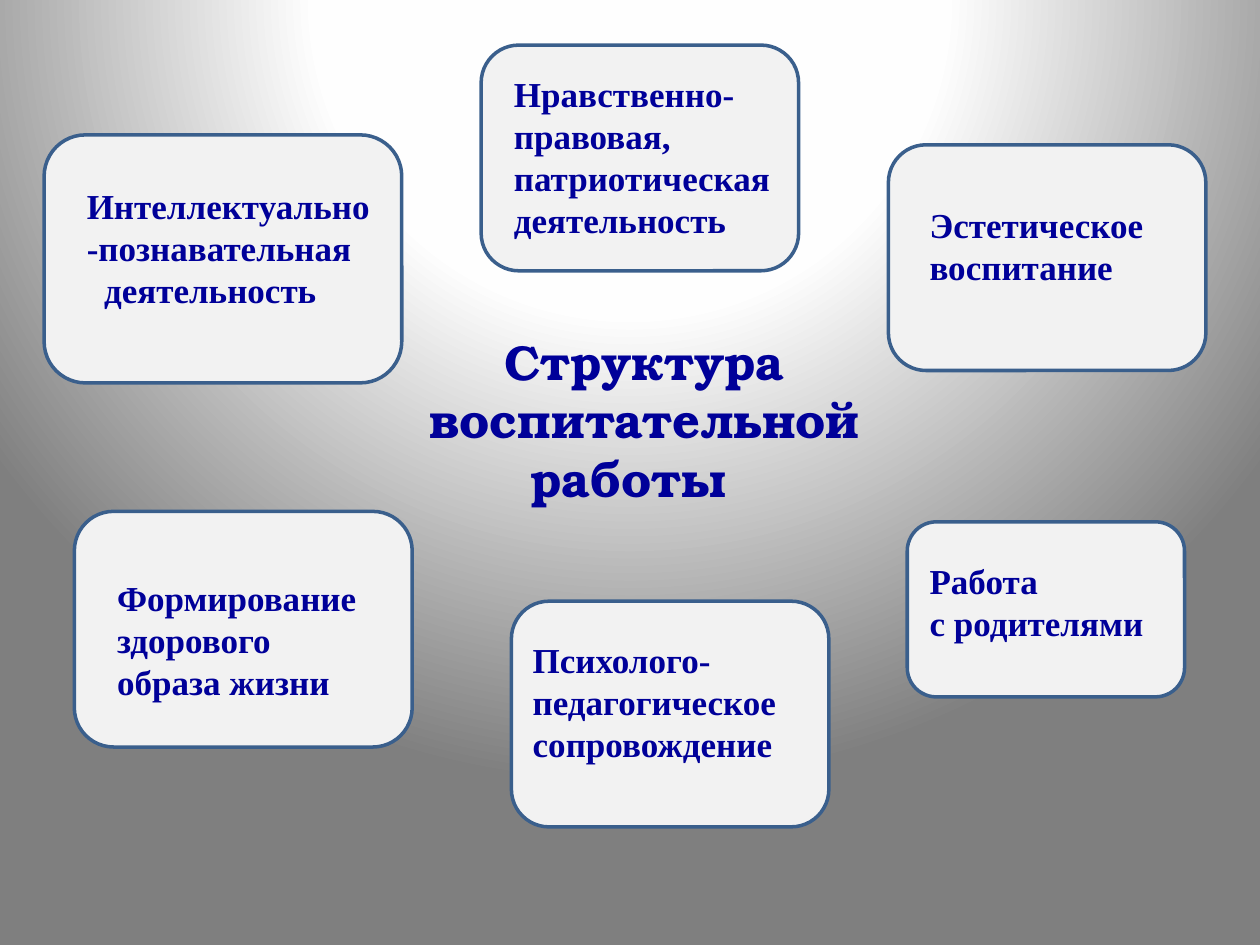
import dataclasses

import pptx
import pptx.dml.color
import pptx.enum.shapes
import pptx.enum.text
import pptx.oxml
import pptx.oxml.ns
import pptx.util

Cm = pptx.util.Cm
Align = pptx.enum.text.PP_ALIGN


@dataclasses.dataclass(frozen=True)
class Theme:
    ink: str = "000099"
    card: str = "F2F2F2"
    border: str = "3A5F8C"
    glow: tuple = ((0, "FFFFFF"), (40, "FEFEFE"), (100, "7F7F7F"))
    title_font: str = "TeX Gyre Bonum"
    card_font: str = "Times New Roman"
    title_size: float = 27.9
    card_size: float = 20
    border_width: float = 2


theme = Theme()


def color(value):
    return pptx.dml.color.RGBColor.from_string(value)


def add_text(page, place, lines, font, size, align):
    """Add a text box and return its paragraphs, one for each line."""
    box = page.shapes.add_textbox(*map(Cm, place))
    frame = box.text_frame
    frame.word_wrap = True
    frame.vertical_anchor = pptx.enum.text.MSO_ANCHOR.MIDDLE
    frame.text = "\n".join(lines)
    for para in frame.paragraphs:
        para.alignment = align
        para.font.name = font
        para.font.size = pptx.util.Pt(size)
        para.font.bold = True
        para.font.color.rgb = color(theme.ink)
    return frame.paragraphs


deck = pptx.Presentation()
deck.slide_width, deck.slide_height = Cm(25.4), Cm(19.05)
page = deck.slides.add_slide(deck.slide_layouts[6])

# Radial background, centred above the slide
page.background.fill.gradient()
stops = "".join(
    f'<a:gs pos="{position * 1000}"><a:srgbClr val="{value}"/></a:gs>'
    for position, value in theme.glow
)
glow = pptx.oxml.parse_xml(
    f'<a:gradFill {pptx.oxml.ns.nsdecls("a")} rotWithShape="1">'
    f"<a:gsLst>{stops}</a:gsLst>"
    '<a:path path="circle">'
    '<a:fillToRect l="50000" t="-80000" r="50000" b="180000"/>'
    "</a:path></a:gradFill>"
)
background = page.element.find(".//" + pptx.oxml.ns.qn("p:bgPr"))
background.replace(background[0], glow)

title = add_text(
    page, (7.29, 6.65, 11.4, 3.6),
    ["Структура", "воспитательной", "работы"],
    theme.title_font, theme.title_size, Align.CENTER,
)
# The last line sits a little left of the centre
title[-1]._p.get_or_add_pPr().set("marR", str(Cm(0.65)))

# Card place, text place (left, top, width, height in cm), lines
cards = [
    ((0.89, 2.72, 7.21, 5), (1.5, 3.58, 6.4, 2.82),
     ["Интеллектуально-познавательная", "деятельность"]),
    ((9.7, 0.91, 6.4, 4.55), (10.11, 1.32, 5.79, 3.68),
     ["Нравственно-правовая, патриотическая деятельность"]),
    ((17.91, 2.92, 6.4, 4.55), (18.49, 3.96, 5.11, 1.96),
     ["Эстетическое воспитание"]),
    ((1.5, 10.31, 6.81, 4.75), (2.11, 11.48, 5.59, 2.82),
     ["Формирование здорового образа жизни"]),
    ((10.31, 12.12, 6.4, 4.55), (10.49, 12.73, 5.79, 2.82),
     ["Психолого-педагогическое сопровождение"]),
    ((18.29, 10.52, 5.59, 3.53), (18.49, 11.15, 5.41, 1.96),
     ["Работа", "с родителями"]),
]
card_texts = []
for card_place, text_place, lines in cards:
    card = page.shapes.add_shape(
        pptx.enum.shapes.MSO_SHAPE.ROUNDED_RECTANGLE, *map(Cm, card_place)
    )
    card.shadow.inherit = False
    card.fill.solid()
    card.fill.fore_color.rgb = color(theme.card)
    card.line.color.rgb = color(theme.border)
    card.line.width = pptx.util.Pt(theme.border_width)
    card_texts.append(add_text(
        page, text_place, lines,
        theme.card_font, theme.card_size, Align.JUSTIFY,
    ))

# "деятельность" on the first card is indented
card_texts[0][-1]._p.get_or_add_pPr().set("marL", str(Cm(0.35)))

deck.save("out.pptx")
